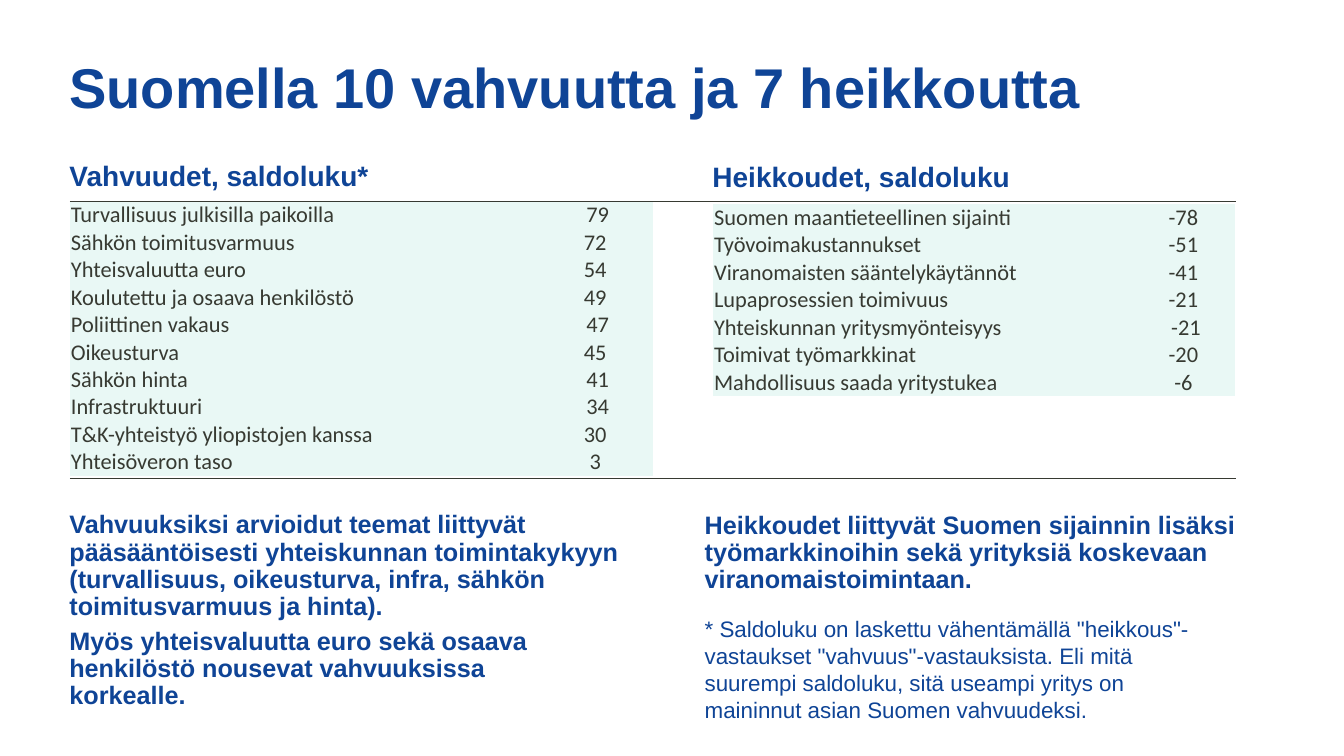
"""Slide on Finland's ten strengths and seven weaknesses as balance figures."""
from lxml import etree
from pptx import Presentation
from pptx.dml.color import RGBColor
from pptx.enum import shapes, text
from pptx.oxml.ns import qn
from pptx.util import Pt

BLUE = RGBColor(0x0F, 0x44, 0x96)
DARK = RGBColor(0x37, 0x3A, 0x32)
MINT = RGBColor(0xE9, 0xF8, 0xF5)
PLAIN = "{2D5ABB26-0587-4C30-8999-92F81FD0307C}"

deck = Presentation()
deck.slide_width, deck.slide_height = Pt(960), Pt(540)
slide = deck.slides.add_slide(deck.slide_layouts[6])


def write(frame, words, size=18, font="Arial", color=BLUE, bold=True,
          space=0.9, align=text.PP_ALIGN.LEFT):
    """Put formatted words into a text frame."""
    para = frame.paragraphs[0]
    para.alignment, para.line_spacing = align, space
    run = para.add_run()
    run.text = words
    run.font.size, run.font.name = Pt(size), font
    run.font.color.rgb, run.font.bold = color, bold


strong = [
    ("Turvallisuus julkisilla paikoilla", "79"),
    ("Sähkön toimitusvarmuus", "72 "),
    ("Yhteisvaluutta euro", "54 "),
    ("Koulutettu ja osaava henkilöstö", "49 "),
    ("Poliittinen vakaus", "47"),
    ("Oikeusturva", "45 "),
    ("Sähkön hinta", "41"),
    ("Infrastruktuuri", "34"),
    ("T&K-yhteistyö yliopistojen kanssa", "30 "),
    ("Yhteisöveron taso", "3 "),
]
weak = [
    ("Suomen maantieteellinen sijainti", "-78 "),
    ("Työvoimakustannukset", "-51 "),
    ("Viranomaisten sääntelykäytännöt", "-41 "),
    ("Lupaprosessien toimivuus", "-21 "),
    ("Yhteiskunnan yritysmyönteisyys", "-21"),
    ("Toimivat työmarkkinat", "-20 "),
    ("Mahdollisuus saada yritystukea", "-6 "),
]
tables = [
    (strong, 50, 144, (337.7, 78.5)),
    (weak, 509.4, 145.8, (302.4, 70.6)),
]
high = 19.6
aligns = (text.PP_ALIGN.LEFT, text.PP_ALIGN.CENTER)
for rows, left, top, widths in tables:
    table = slide.shapes.add_table(len(rows), 2, Pt(left), Pt(top),
                                   Pt(sum(widths)), Pt(high * len(rows))).table
    table.first_row = table.horz_banding = False
    table._tbl.tblPr.find(qn("a:tableStyleId")).text = PLAIN
    for col, width in zip(table.columns, widths):
        col.width = Pt(width)
    for row, words in zip(table.rows, rows):
        row.height = Pt(high)
        for cell, word, align in zip(row.cells, words, aligns):
            cell.fill.solid()
            cell.fill.fore_color.rgb = MINT
            cell.margin_left = cell.margin_right = Pt(0.7)
            cell.margin_top = cell.margin_bottom = 0
            cell.vertical_anchor = text.MSO_ANCHOR.BOTTOM
            write(cell.text_frame, word, size=16, font="Calibri",
                  color=DARK, bold=False, space=1, align=align)

boxes = [
    ("Suomella 10 vahvuutta ja 7 heikkoutta",
     (42.5, 25.2, 890, 78.5), {"size": 40}),
    ("Vahvuudet, saldoluku*", (42.5, 105.1, 416.2, 42.5), {"size": 20}),
    ("Heikkoudet, saldoluku", (501.8, 106.2, 416.2, 42.5), {"size": 20}),
    ("Heikkoudet liittyvät Suomen sijainnin lisäksi työmarkkinoihin sekä "
     "yrityksiä koskevaan viranomaistoimintaan.",
     (496.3, 343, 396, 104.4), {}),
    ("Vahvuuksiksi arvioidut teemat liittyvät pääsääntöisesti yhteiskunnan "
     "toimintakykyyn (turvallisuus, oikeusturva, infra, sähkön "
     "toimitusvarmuus ja hinta).", (42.5, 352.5, 424.1, 104.4), {}),
    ("Myös yhteisvaluutta euro sekä osaava henkilöstö nousevat vahvuuksissa "
     "korkealle.", (42.5, 426, 371.5, 104.4), {}),
    ("* Saldoluku on laskettu vähentämällä \"heikkous\"-vastaukset "
     "\"vahvuus\"-vastauksista. Eli mitä suurempi saldoluku, sitä useampi "
     "yritys on maininnut asian Suomen vahvuudeksi.",
     (496.3, 463.7, 386.6, 28.8), {"size": 16, "bold": False, "space": 1}),
]
for words, place, form in boxes:
    frame = slide.shapes.add_textbox(*map(Pt, place)).text_frame
    frame.word_wrap = True
    frame.vertical_anchor = text.MSO_ANCHOR.MIDDLE
    write(frame, words, **form)

for y in (144, 342):
    rule = slide.shapes.add_connector(shapes.MSO_CONNECTOR.STRAIGHT,
                                      Pt(50), Pt(y), Pt(882.7), Pt(y))
    rule.line.color.rgb, rule.line.width = DARK, Pt(0.5)
    etree.SubElement(rule._element.spPr, qn("a:effectLst"))

deck.save("out.pptx")
